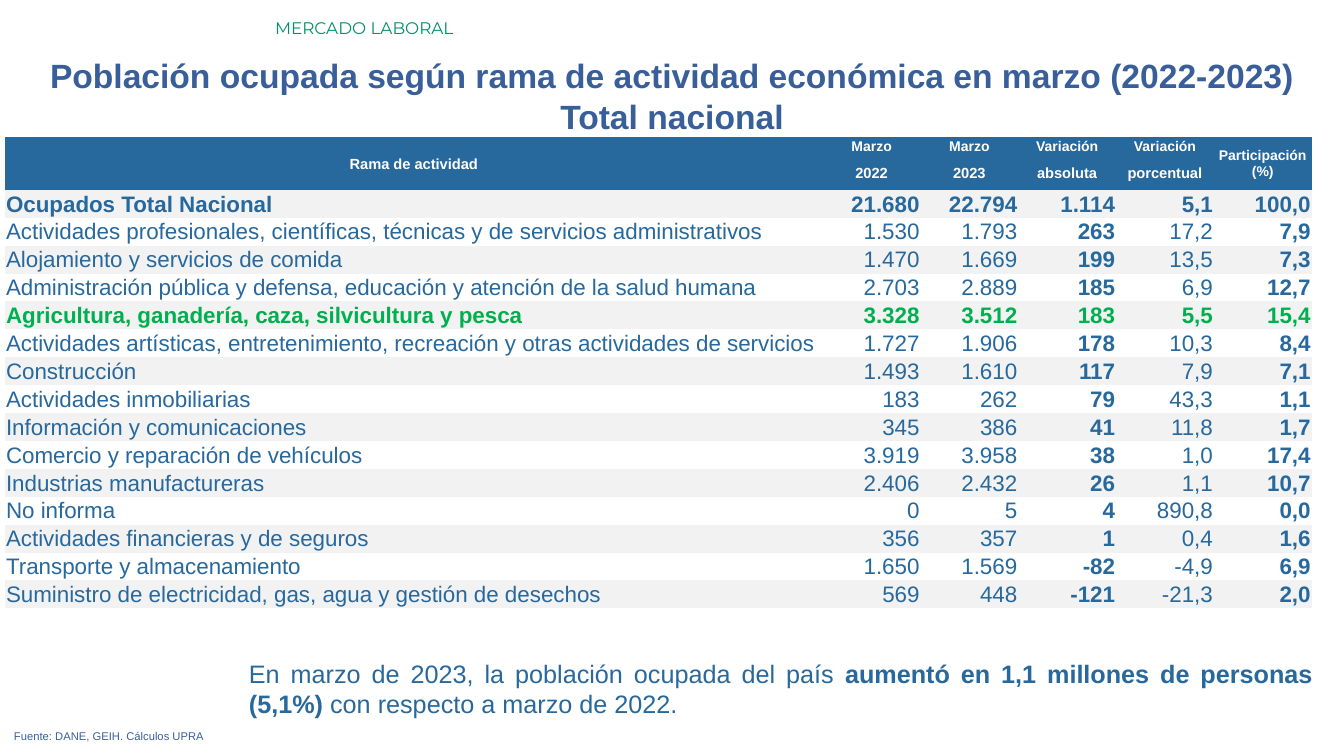
from pptx import Presentation
from pptx.dml.color import RGBColor
from pptx.enum.text import MSO_ANCHOR, PP_ALIGN as Align
from pptx.util import Inches, Pt

BLUE = RGBColor(0x27, 0x68, 0x9D)
NAVY = RGBColor(0x39, 0x5F, 0x9B)
TEAL = RGBColor(0x00, 0x92, 0x67)
GREEN = RGBColor(0x00, 0xB0, 0x50)
GREY = RGBColor(0xF2, 0xF2, 0xF2)
WHITE = RGBColor(0xFF, 0xFF, 0xFF)
NO_STYLE = "{2D5ABB26-0587-4C30-8999-92F81FD0307C}"

HEADER_TOP = ["Rama de actividad", "Marzo", "Marzo", "Variación", "Variación", "Participación (%)"]
HEADER_SUB = ["", "2022", "2023", "absoluta", "porcentual", ""]
TOTAL = "Ocupados Total Nacional"
FARMING = "Agricultura, ganadería, caza, silvicultura y pesca"
BRANCHES = [
    (TOTAL, "21.680", "22.794", "1.114", "5,1", "100,0"),
    ("Actividades profesionales, científicas, técnicas y de servicios administrativos",
     "1.530", "1.793", "263", "17,2", "7,9"),
    ("Alojamiento y servicios de comida", "1.470", "1.669", "199", "13,5", "7,3"),
    ("Administración pública y defensa, educación y atención de la salud humana",
     "2.703", "2.889", "185", "6,9", "12,7"),
    (FARMING, "3.328", "3.512", "183", "5,5", "15,4"),
    ("Actividades artísticas, entretenimiento, recreación y otras actividades de servicios",
     "1.727", "1.906", "178", "10,3", "8,4"),
    ("Construcción", "1.493", "1.610", "117", "7,9", "7,1"),
    ("Actividades inmobiliarias", "183", "262", "79", "43,3", "1,1"),
    ("Información y comunicaciones", "345", "386", "41", "11,8", "1,7"),
    ("Comercio y reparación de vehículos", "3.919", "3.958", "38", "1,0", "17,4"),
    ("Industrias manufactureras", "2.406", "2.432", "26", "1,1", "10,7"),
    ("No informa", "0", "5", "4", "890,8", "0,0"),
    ("Actividades financieras y de seguros", "356", "357", "1", "0,4", "1,6"),
    ("Transporte y almacenamiento", "1.650", "1.569", "-82", "-4,9", "6,9"),
    ("Suministro de electricidad, gas, agua y gestión de desechos",
     "569", "448", "-121", "-21,3", "2,0"),
]


def add_run(p, text, color, **font):
    r = p.add_run()
    r.text = text
    r.font.color.rgb = color
    for name, value in {"name": "Arial", **font}.items():
        setattr(r.font, name, value)


def fill_cell(cell, text, align, fill, color, **font):
    cell.vertical_anchor = MSO_ANCHOR.MIDDLE
    margins = {"left": 0.01, "top": 0.01, "right": 0.01, "bottom": 0}
    for side, inset in margins.items():
        setattr(cell, f"margin_{side}", Inches(inset))
    if fill is None:
        cell.fill.background()
    else:
        cell.fill.solid()
        cell.fill.fore_color.rgb = fill
    p = cell.text_frame.paragraphs[0]
    p.alignment = align
    if text:
        add_run(p, text, color, **font)


prs = Presentation()
prs.slide_width, prs.slide_height = Inches(13.33), Inches(7.5)
s = prs.slides.add_slide(prs.slide_layouts[6])

# Text boxes: place, alignment, colour, font, paragraphs of (text, bold) runs
TEXTS = [
    ((2.63, 0.13, 10.7, 0.3), Align.LEFT, TEAL, {"name": "Montserrat", "size": Pt(12)},
     [[("MERCADO LABORAL", False)]]),
    ((0, 0.5, 13.33, 0.91), Align.CENTER, NAVY, {"size": Pt(24)},
     [[("Población ocupada según rama de actividad económica en marzo (2022-2023)", True)],
      [("Total nacional", True)]]),
    ((2.37, 6.48, 10.75, 0.71), Align.JUSTIFY, BLUE, {"size": Pt(18)},
     [[("En marzo de 2023, la población ocupada del país ", False),
       ("aumentó en 1,1 millones de personas (5,1%) ", True),
       ("con respecto a marzo de 2022.", False)]]),
    ((0.04, 7.19, 12.91, 0.24), Align.JUSTIFY, NAVY, {"size": Pt(8)},
     [[("Fuente: DANE, GEIH. Cálculos UPRA", False)]]),
]
for place, align, color, font, paragraphs in TEXTS:
    tf = s.shapes.add_textbox(*map(Inches, place)).text_frame
    tf.word_wrap = True
    for i, runs in enumerate(paragraphs):
        p = tf.add_paragraph() if i else tf.paragraphs[0]
        p.alignment = align
        for text, bold in runs:
            add_run(p, text, color, bold=bold, **font)

# Table of branches of activity
col_widths = [8.11] + [0.97] * 5
row_heights = [0.18, 0.34] + [4.15 / len(BRANCHES)] * len(BRANCHES)
frame = s.shapes.add_table(len(row_heights), len(col_widths), Inches(0.05), Inches(1.36),
                           Inches(sum(col_widths)), Inches(sum(row_heights)))
table = frame.table
table.first_row = table.horz_banding = False
table._tbl.tblPr[0].text = NO_STYLE
for column, width in zip(table.columns, col_widths):
    column.width = Inches(width)
for row, height in zip(table.rows, row_heights):
    row.height = Inches(height)

for i, labels in enumerate([HEADER_TOP, HEADER_SUB]):
    for j, label in enumerate(labels):
        size = Pt(10.5 if i or j == 0 else 10)
        fill_cell(table.cell(i, j), label, Align.CENTER, BLUE, WHITE, size=size, bold=True)
for j in (0, 5):
    table.cell(0, j).merge(table.cell(1, j))

for i, values in enumerate(BRANCHES):
    branch = values[0]
    color = GREEN if branch == FARMING else BLUE
    for j, value in enumerate(values):
        fill_cell(table.cell(i + 2, j), value, Align.RIGHT if j else Align.LEFT,
                  None if i % 2 else GREY, color, size=Pt(16),
                  bold=branch in (TOTAL, FARMING) or j in (3, 5))

prs.save("out.pptx")
